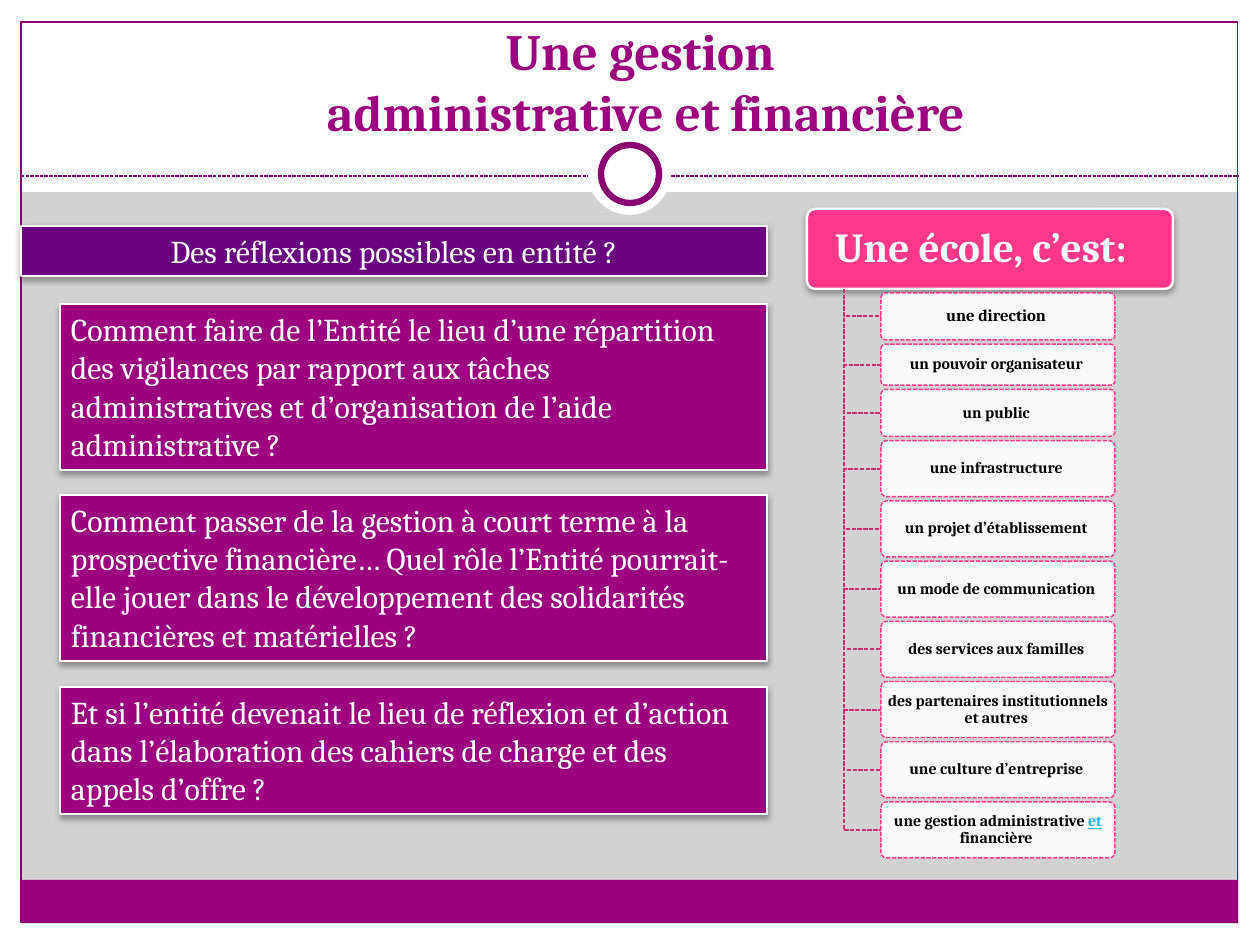
from dataclasses import dataclass

from lxml import etree
from pptx import Presentation
from pptx.dml.color import RGBColor
from pptx.enum.dml import MSO_LINE
from pptx.enum.shapes import MSO_CONNECTOR, MSO_SHAPE
from pptx.enum.text import MSO_ANCHOR, MSO_AUTO_SIZE, PP_ALIGN
from pptx.oxml import parse_xml
from pptx.oxml.ns import qn
from pptx.util import Pt

RECT, OVAL, ROUNDED = MSO_SHAPE.RECTANGLE, MSO_SHAPE.OVAL, MSO_SHAPE.ROUNDED_RECTANGLE
CENTER, LEFT = PP_ALIGN.CENTER, PP_ALIGN.LEFT
TOP, MIDDLE = MSO_ANCHOR.TOP, MSO_ANCHOR.MIDDLE
DASH = MSO_LINE.SQUARE_DOT
PX = 8000  # 1260 by 945 px make 28 by 21 cm


@dataclass(frozen=True)
class Theme:
    font: str = "Cambria"
    grey: str = "D2D2D2"
    white: str = "FFFFFF"
    black: str = "000000"
    magenta: str = "9C007F"
    frame: str = "8A0070"
    violet: str = "68007F"
    pink: str = "FF388C"
    branch: str = "CC2D70"
    link: str = "17BBFD"
    title_size: float = 32
    heading_size: float = 26
    body_size: float = 20
    first_item_size: float = 10.5
    item_size: float = 10


theme = Theme()
SHADOW = (
    '<a:outerShdw xmlns:a="http://schemas.openxmlformats.org/drawingml/2006/main" '
    'blurRad="50800" dist="25400" dir="5400000" rotWithShape="0">'
    '<a:srgbClr val="000000"><a:alpha val="35000"/></a:srgbClr></a:outerShdw>'
)

deck = Presentation()
deck.slide_width, deck.slide_height = 1260 * PX, 945 * PX
page = deck.slides.add_slide(deck.slide_layouts[5])
page.background.fill.solid()
page.background.fill.fore_color.rgb = RGBColor.from_string(theme.grey)


def add_box(kind, bounds, fill=None, line=None, width=0.75, raised=False):
    box = page.shapes.add_shape(kind, *(round(value * PX) for value in bounds))
    box.shadow.inherit = False
    if fill:
        box.fill.solid()
        box.fill.fore_color.rgb = RGBColor.from_string(fill)
    else:
        box.fill.background()
    if line:
        box.line.color.rgb = RGBColor.from_string(line)
        box.line.width = Pt(width)
    else:
        box.line.fill.background()
    if kind == ROUNDED:
        box.adjustments[0] = 0.1
    if raised:
        box._element.spPr.find(qn("a:effectLst")).append(parse_xml(SHADOW))
    return box


def write(box, lines, size, color, align=CENTER, anchor=TOP, bold=False,
          insets=(11, 6, 11, 6), spacing=1.0):
    """Fill a box with paragraphs, each given as a list of run texts."""
    frame = box.text_frame
    frame.word_wrap = True
    frame.auto_size = MSO_AUTO_SIZE.NONE
    frame.vertical_anchor = anchor
    frame.margin_left, frame.margin_top, frame.margin_right, frame.margin_bottom = (
        inset * PX for inset in insets)
    for index, texts in enumerate(lines):
        para = frame.add_paragraph() if index else frame.paragraphs[0]
        para.alignment = align
        para.line_spacing = spacing
        para.font.name = theme.font
        para.font.size = Pt(size)
        para.font.bold = bold
        para.font.color.rgb = RGBColor.from_string(color)
        for text in texts:
            para.add_run().text = text
    return frame


# Page furniture
for bounds in ((0, 924, 1260, 21), (0, 0, 1260, 192), (0, 0, 21, 945), (1239, 0, 21, 945)):
    add_box(RECT, bounds, theme.white)
add_box(RECT, (21, 880, 1217, 43), theme.magenta)
add_box(RECT, (21, 22, 1217, 901), line=theme.frame)
divider = page.shapes.add_connector(
    MSO_CONNECTOR.STRAIGHT, 21 * PX, 176 * PX, 1238 * PX, 176 * PX)
divider.line.color.rgb = RGBColor.from_string(theme.frame)
divider.line.width = Pt(0.75)
divider.line.dash_style = DASH
etree.SubElement(divider._element.spPr, qn("a:effectLst"))
add_box(OVAL, (588, 132, 83, 83), theme.white)
add_box(OVAL, (601, 145, 58, 58), theme.white, theme.frame, 4)

# Title, brought in front of the white band
title = page.shapes.title
title.left, title.top, title.width, title.height = 217 * PX, 14 * PX, 858 * PX, 135 * PX
write(title, [["Une gestion "], ["administrative et financière"]],
      theme.title_size, theme.magenta, bold=True)
page.shapes._spTree.append(title._element)

# Questions
banner = add_box(RECT, (21, 226, 746, 50), theme.violet, theme.white, 1.57, raised=True)
write(banner, [["Des réflexions possibles en entité ?"]], theme.body_size, theme.white)
questions = [
    (304, 166, "Comment faire de l’Entité le lieu d’une répartition des vigilances par rapport "
     "aux tâches administratives et d’organisation de l’aide administrative ?"),
    (495, 166, "Comment passer de la gestion à court terme à la prospective financière… Quel rôle "
     "l’Entité pourrait-elle jouer dans le développement des solidarités financières et "
     "matérielles ?"),
    (687, 127, "Et si l’entité devenait le lieu de réflexion et d’action dans l’élaboration des "
     "cahiers de charge et des appels d’offre ?"),
]
for top, height, question in questions:
    box = add_box(RECT, (60, top, 707, height), theme.magenta, theme.white, 1.57, raised=True)
    write(box, [[question]], theme.body_size, theme.white, LEFT)

# School tree
heading = add_box(ROUNDED, (807, 209, 366, 80), theme.pink, theme.white, 1.57, raised=True)
write(heading, [["Une école, c’est:"]], theme.heading_size, theme.white,
      anchor=MIDDLE, bold=True, insets=(6, 5, 24, 5), spacing=0.9)
items = [
    (47, ["une direction "]),
    (41, ["un pouvoir organisateur "]),
    (47, ["un public "]),
    (56, ["une infrastructure "]),
    (56, ["un projet d’établissement "]),
    (56, ["un mode de communication "]),
    (56, ["des services aux familles "]),
    (56, ["des partenaires institutionnels et autres "]),
    (56, ["une culture d’entreprise "]),
    (56, ["une gestion administrative ", "et", " financière "]),
]
trunk, trunk_top, first_top, last_bottom, item_left = 844, 289, 293, 858, 881
gap = (last_bottom - first_top - sum(height for height, _ in items)) / (len(items) - 1)
top = first_top
for height, texts in items:
    middle = round(top + height / 2)
    builder = page.shapes.build_freeform(trunk, trunk_top, scale=PX)
    builder.add_line_segments([(trunk, middle), (item_left, middle)], close=False)
    branch = builder.convert_to_shape()
    branch.shadow.inherit = False
    branch.fill.background()
    branch.line.color.rgb = RGBColor.from_string(theme.branch)
    item = add_box(ROUNDED, (item_left, top, 234, height), theme.white, theme.pink)
    color = item._element.spPr.find(qn("a:solidFill")).find(qn("a:srgbClr"))
    etree.SubElement(color, qn("a:alpha"), val="90000")
    for outlined in (branch, item):
        outlined.line.width = Pt(0.9)
        outlined.line.dash_style = DASH
    size = theme.first_item_size if top == first_top else theme.item_size
    frame = write(item, [texts], size, theme.black,
                  anchor=MIDDLE, bold=True, insets=(2, 1, 2, 1), spacing=0.9)
    top += height + gap

linked = frame.paragraphs[0].runs[1].font
linked.color.rgb = RGBColor.from_string(theme.link)
linked.underline = True

deck.save("out.pptx")
